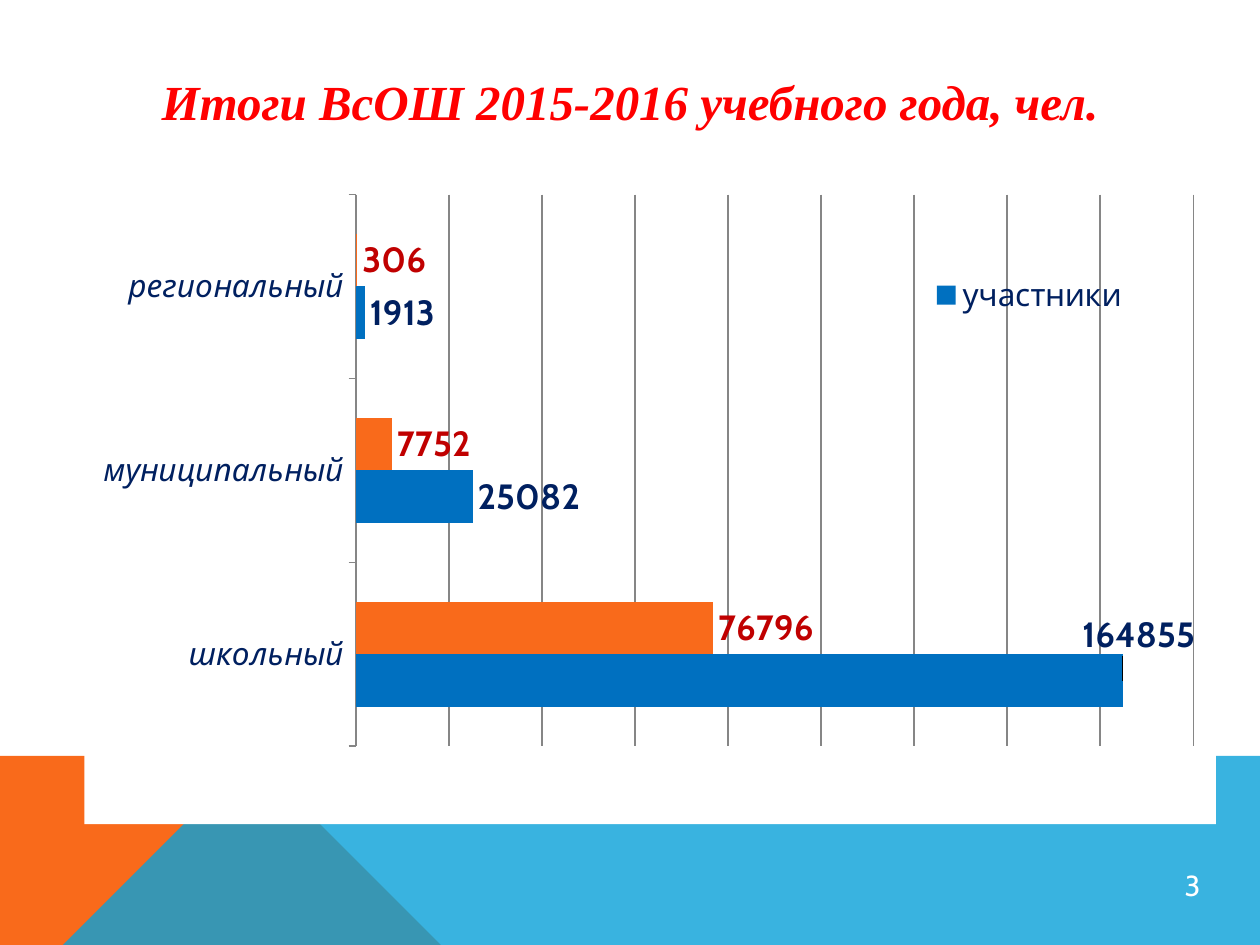
import pptx
import pptx.chart.data
import pptx.dml.color
import pptx.enum.chart
import pptx.enum.shapes
import pptx.enum.text
import pptx.oxml
import pptx.oxml.ns
import pptx.util

RGBColor = pptx.dml.color.RGBColor
ORANGE = RGBColor(0xF9, 0x6A, 0x1B)
SKY = RGBColor(0x08, 0xA1, 0xD9)
BLUE = RGBColor(0x00, 0x70, 0xC0)
NAVY = RGBColor(0x00, 0x20, 0x60)
CRIMSON = RGBColor(0xC0, 0x00, 0x00)
RED = RGBColor(0xFF, 0x00, 0x00)
GRAY = RGBColor(0x86, 0x86, 0x86)
WHITE = RGBColor(0xFF, 0xFF, 0xFF)

WIDTH, HEIGHT = 10, 7.5
BAND_TOP, BAND_BEND = 5.52, 2.23
LEVELS = ["школьный", "муниципальный", "региональный"]
SERIES = [
    ("участники", [164855, 25082, 1913], BLUE, NAVY),
    ("победители и призеры", [76796, 7752, 306], ORANGE, CRIMSON),
]


def inches(*lengths):
    return [pptx.util.Inches(length) for length in lengths]


def chart_xml(body):
    return pptx.oxml.parse_xml(body.replace(">", f" {pptx.oxml.ns.nsdecls('c')}>", 1))


def manual_layout(inner=False, **shares):
    target = '<c:layoutTarget val="inner"/>' if inner else ""
    modes = "".join(f'<c:{axis}Mode val="edge"/>' for axis in "xy") if "w" in shares else ""
    sizes = "".join(f'<c:{side} val="{share}"/>' for side, share in shares.items())
    return chart_xml(f"<c:layout><c:manualLayout>{target}{modes}{sizes}</c:manualLayout></c:layout>")


def style_font(font, size, color, name="Cabin", bold=False, italic=False):
    font.size = pptx.util.Pt(size)
    font.color.rgb = color
    font.name = name
    font.bold = bold
    font.italic = italic


def add_band(slide, corners, color, opacity=100):
    outline = slide.shapes.build_freeform(*corners[0], scale=pptx.util.Inches(1))
    outline.add_line_segments(corners[1:], close=True)
    band = outline.convert_to_shape()
    band.shadow.inherit = False
    band.fill.solid()
    band.fill.fore_color.rgb = color
    band.line.fill.background()
    if opacity < 100:
        tint = band.element.spPr.find(".//" + pptx.oxml.ns.qn("a:srgbClr"))
        tint.append(pptx.oxml.parse_xml(
            f'<a:alpha {pptx.oxml.ns.nsdecls("a")} val="{opacity * 1000}"/>'))


def write_centred(shape, text, size, color, **style):
    frame = shape.text_frame
    frame.word_wrap = True
    frame.text = text
    line = frame.paragraphs[0]
    line.alignment = pptx.enum.text.PP_ALIGN.CENTER
    style_font(line.runs[0].font, size, color, **style)
    return frame


def add_page_number(slide, number):
    badge = slide.shapes.add_shape(
        pptx.enum.shapes.MSO_SHAPE.OVAL, *inches(9.19, 6.75, 0.55, 0.55))
    badge.shadow.inherit = False
    badge.fill.background()
    badge.line.fill.background()
    frame = write_centred(badge, number, 16.5, WHITE)
    frame.vertical_anchor = pptx.enum.text.MSO_ANCHOR.MIDDLE
    frame.margin_left = frame.margin_right = pptx.util.Inches(0.01)
    frame.margin_top = frame.margin_bottom = pptx.util.Inches(0.01)


def add_title(slide, text):
    title = slide.shapes.add_textbox(*inches(0.51, 0.52, 8.98, 0.57))
    write_centred(title, text, 28, RED, name="Times New Roman", bold=True, italic=True)


def style_axes(chart):
    levels, people = chart.category_axis, chart.value_axis
    style_font(levels.tick_labels.font, 18, NAVY, italic=True)
    levels.major_tick_mark = pptx.enum.chart.XL_TICK_MARK.OUTSIDE
    levels.format.line.color.rgb = GRAY
    people.minimum_scale, people.maximum_scale, people.major_unit = 0, 180000, 20000
    people.has_major_gridlines = True
    people.major_gridlines.format.line.color.rgb = GRAY
    people.visible = False


def style_series(series, bar_color, label_color):
    series.format.fill.solid()
    series.format.fill.fore_color.rgb = bar_color
    series.invert_if_negative = False
    labels = series.data_labels
    labels.show_value = True
    labels.position = pptx.enum.chart.XL_LABEL_POSITION.OUTSIDE_END
    style_font(labels.font, 20, label_color, bold=True)


def shift_label(series, index, color, **shares):
    label = series.points[index].data_label
    style_font(label.font, 20, color, bold=True)
    label.position = pptx.enum.chart.XL_LABEL_POSITION.OUTSIDE_END
    mark = series.data_labels._element.find(pptx.oxml.ns.qn("c:dLbl"))
    mark.insert(1, manual_layout(**shares))


def style_legend(chart):
    chart.has_legend = True
    legend = chart.legend
    legend.position = pptx.enum.chart.XL_LEGEND_POSITION.RIGHT
    legend.include_layout = False
    style_font(legend.font, 18, NAVY)
    element = legend._element
    for old in element.findall(pptx.oxml.ns.qn("c:layout")):
        element.remove(old)
    element.insert(1, chart_xml(
        '<c:legendEntry><c:idx val="0"/><c:delete val="1"/></c:legendEntry>'))
    element.insert(2, manual_layout(x=0.71, y=0.11, w=0.25, h=0.15))


def add_results_chart(slide):
    results = pptx.chart.data.CategoryChartData()
    results.categories = LEVELS
    for name, counts, *_ in SERIES:
        results.add_series(name, counts)
    chart = slide.shapes.add_chart(
        pptx.enum.chart.XL_CHART_TYPE.BAR_CLUSTERED,
        *inches(0.67, 1.39, 8.98, 5.15), results).chart
    chart.has_title = False
    chart.font.name = "Cabin"
    chart.font.size = pptx.util.Pt(18)
    plot = chart.plots[0]
    plot.gap_width, plot.overlap, plot.vary_by_categories = 150, 0, False
    style_axes(chart)
    for series, (_, _, bar_color, label_color) in zip(plot.series, SERIES):
        style_series(series, bar_color, label_color)
    shift_label(plot.series[0], 0, NAVY, x=-0.04, y=-0.07)
    style_legend(chart)

    space = chart._chartSpace
    area = space.chart.plotArea
    for old in area.findall(pptx.oxml.ns.qn("c:layout")):
        area.remove(old)
    area.insert(0, manual_layout(inner=True, x=0.24, y=0.03, w=0.74, h=0.85))
    space.chart.addnext(chart_xml(
        f'<c:spPr><a:solidFill {pptx.oxml.ns.nsdecls("a")}><a:srgbClr val="{WHITE}"/>'
        "</a:solidFill></c:spPr>"))


def main():
    deck = pptx.Presentation()
    deck.slide_width, deck.slide_height = inches(WIDTH, HEIGHT)
    slide = deck.slides.add_slide(deck.slide_layouts[6])
    add_band(slide, [(0, HEIGHT), (0, BAND_TOP), (BAND_BEND, BAND_TOP), (3.91, HEIGHT)], ORANGE)
    add_band(slide, [(0, HEIGHT), (BAND_BEND, BAND_TOP), (WIDTH, BAND_TOP), (WIDTH, HEIGHT)],
             SKY, opacity=80)
    add_page_number(slide, "3")
    add_title(slide, "Итоги ВсОШ 2015-2016 учебного года, чел.")
    add_results_chart(slide)
    deck.save("out.pptx")


if __name__ == "__main__":
    main()
